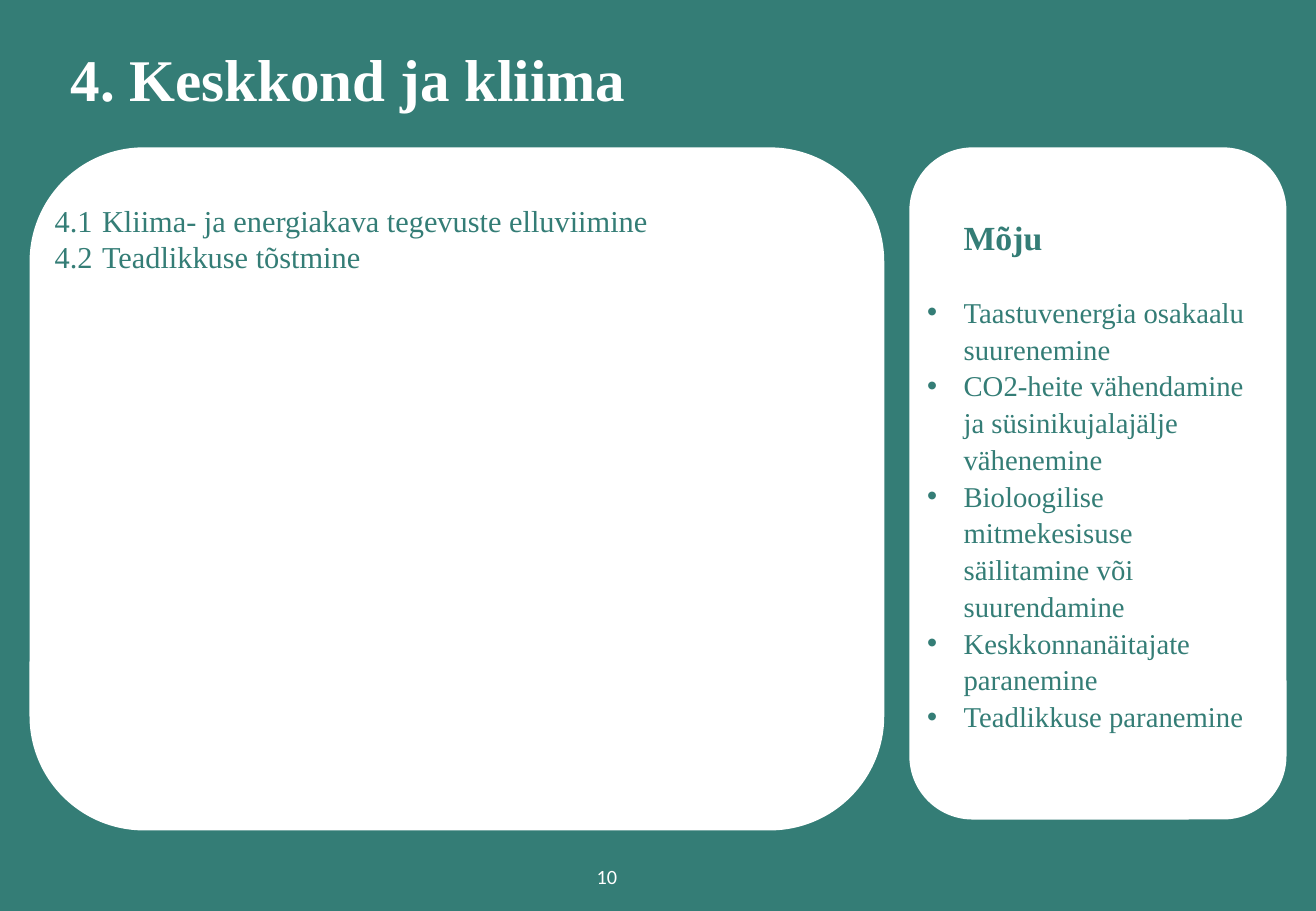
import pptx
import pptx.util
import pptx.dml.color
import pptx.enum.shapes
import pptx.enum.text
from lxml import etree

PX = 9144  # EMU per px, 100 px to the inch
HUES = {"teal": "347D76", "white": "FFFFFF"}
SERIF = "Times New Roman"
ALIGN = pptx.enum.text.PP_ALIGN


def rgb(name):
    return pptx.dml.color.RGBColor.from_string(HUES[name])


def write(par, text, size=18, font=SERIF, hue="teal", bold=False, align=ALIGN.LEFT,
          left=0, hang=0, lead=None, after=0, bullet=None):
    """Fill a paragraph; left and hang are px, lead is a factor or a Pt length."""
    run = par.add_run()
    run.text = text
    run.font.size = pptx.util.Pt(size)
    run.font.name = font
    run.font.bold = bold
    run.font.color.rgb = rgb(hue)
    par.alignment = align
    par.space_before = pptx.util.Pt(0)
    par.space_after = pptx.util.Pt(after)
    if lead:
        par.line_spacing = lead
    props = par._p.get_or_add_pPr()
    props.set("marL", str(left * PX))
    props.set("indent", str(-hang * PX))
    if bullet:
        space = pptx.oxml.ns.qn("a:buFont")
        etree.SubElement(props, space).set("typeface", "Arial")
        etree.SubElement(props, pptx.oxml.ns.qn("a:buChar")).set("char", bullet)


class Deck:
    def __init__(self, wide, high):
        self.show = pptx.Presentation()
        self.show.slide_width = wide * PX
        self.show.slide_height = high * PX
        self.slide = self.show.slides.add_slide(self.show.slide_layouts[5])
        fill = self.slide.background.fill
        fill.solid()
        fill.fore_color.rgb = rgb("teal")

    def place(self, shape, box):
        shape.left, shape.top, shape.width, shape.height = (n * PX for n in box)

    def frame(self, shape, wrap=True):
        frame = shape.text_frame
        frame.word_wrap = wrap
        frame.auto_size = pptx.enum.text.MSO_AUTO_SIZE.NONE
        frame.vertical_anchor = pptx.enum.text.MSO_ANCHOR.MIDDLE
        frame.margin_left = frame.margin_right = 5 * PX
        frame.margin_top = frame.margin_bottom = 5 * PX
        return frame

    def title(self, box, text, **style):
        shape = self.slide.shapes.title
        self.place(shape, box)
        write(self.frame(shape).paragraphs[0], text, **style)

    def panel(self, box):
        kind = pptx.enum.shapes.MSO_SHAPE.ROUNDED_RECTANGLE
        shape = self.slide.shapes.add_shape(kind, *(n * PX for n in box))
        shape.shadow.inherit = False
        shape.fill.solid()
        shape.fill.fore_color.rgb = rgb("white")
        shape.line.color.rgb = rgb("white")
        shape.line.width = pptx.util.Pt(1)

    def text(self, box, rows, wrap=True):
        """Add a text box; rows are pairs of wording and format."""
        shape = self.slide.shapes.add_textbox(*(n * PX for n in box))
        frame = self.frame(shape, wrap)
        for i, (text, style) in enumerate(rows):
            par = frame.add_paragraph() if i else frame.paragraphs[0]
            write(par, text, **style)


def main():
    deck = Deck(1083, 750)
    deck.title((53, 38, 978, 60), "4. Keskkond ja kliima",
               size=35, hue="white", bold=True, lead=0.9)

    deck.panel((25, 122, 702, 561))
    goal = dict(left=39, hang=39, align=ALIGN.JUSTIFY, lead=pptx.util.Pt(21.4))
    goals = ["Kliima- ja energiakava tegevuste elluviimine", "Teadlikkuse tõstmine"]
    deck.text((40, 161, 637, 71),
              [(f"4.{n}\t{goal_text}", goal) for n, goal_text in enumerate(goals, 1)])

    deck.panel((749, 122, 309, 552))
    head = dict(size=20, bold=True, left=39, after=21)
    item = dict(size=17, left=39, hang=30, lead=pptx.util.Pt(21.8), bullet="•")
    gains = ["Taastuvenergia osakaalu suurenemine",
             "CO2-heite vähendamine ja süsinikujalajälje vähenemine",
             "Bioloogilise mitmekesisuse säilitamine või suurendamine",
             "Keskkonnanäitajate paranemine",
             "Teadlikkuse paranemine"]
    deck.text((749, 173, 294, 436), [("Mõju", head)] + [(gain, item) for gain in gains])

    page = dict(size=12, font="Calibri", hue="white", align=ALIGN.CENTER)
    deck.text((485, 707, 29, 29), [("10", page)], wrap=False)
    deck.show.save("out.pptx")


if __name__ == "__main__":
    main()
